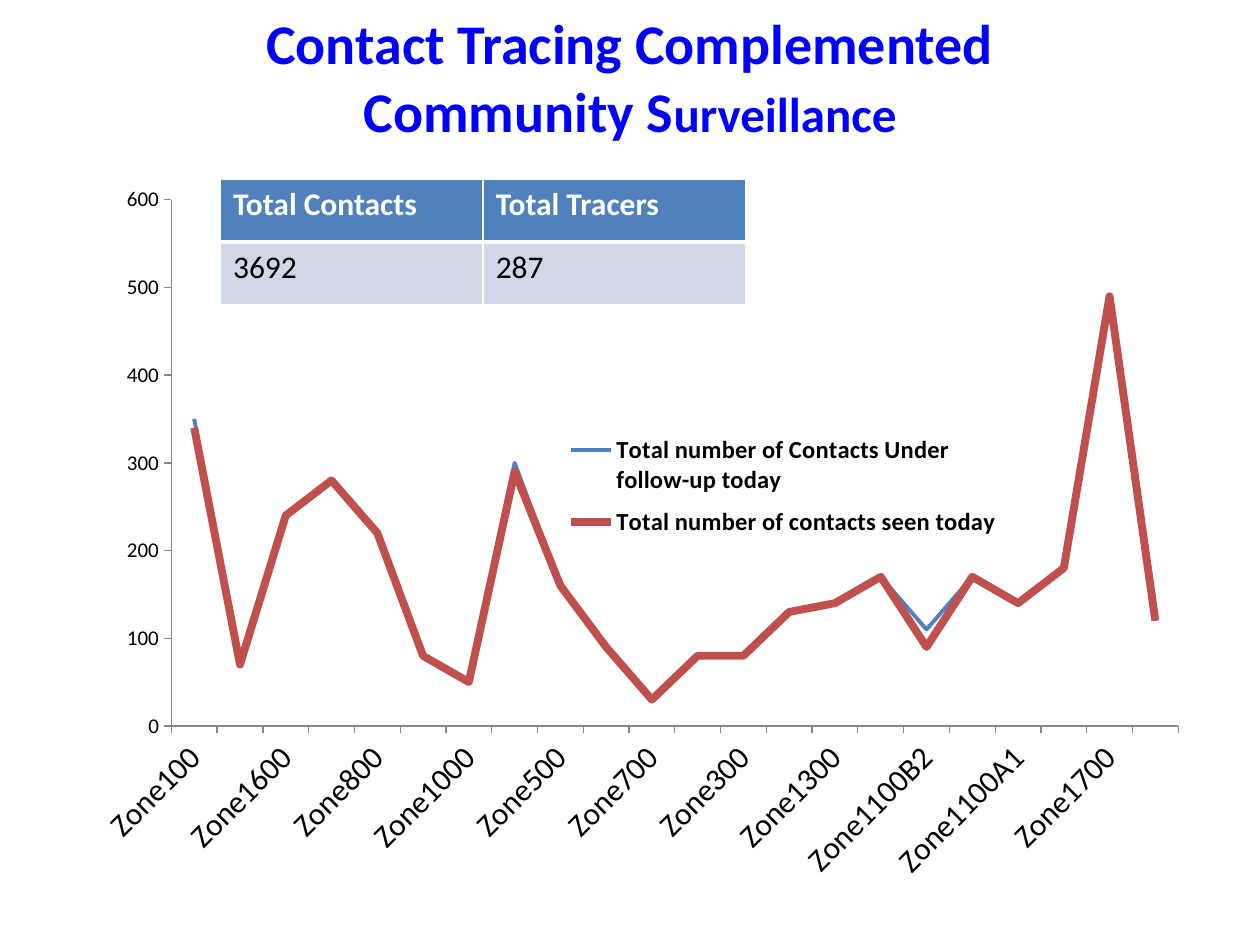
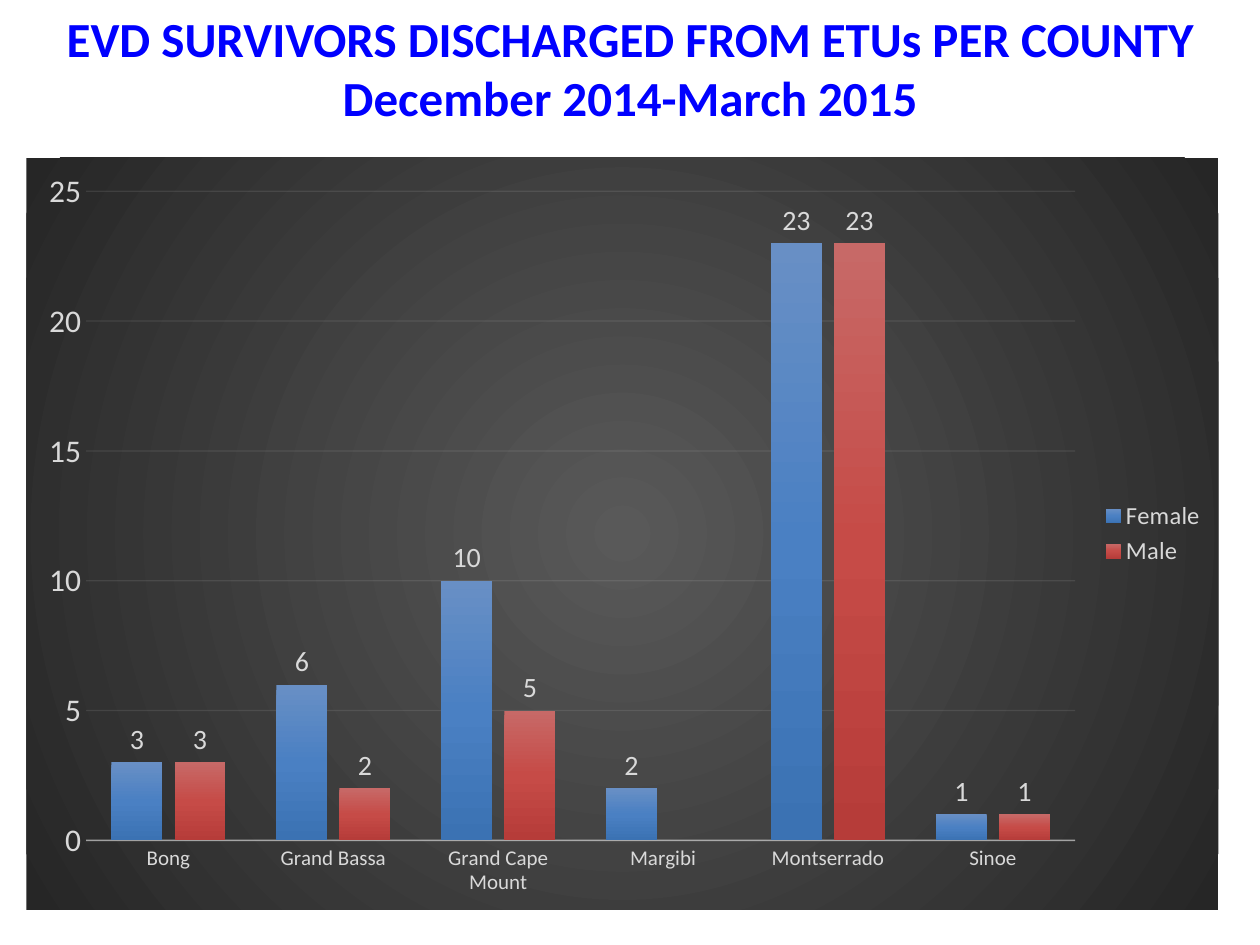
from lxml import etree
from pptx import Presentation
from pptx import util as u
from pptx.chart.data import CategoryChartData
from pptx.dml.color import RGBColor
from pptx.enum import chart as charts, text
from pptx.oxml import parse_xml
from pptx.oxml.ns import nsdecls, qn

PX = 9144
FONT = "Calibri"
WHITE = RGBColor(0xFF, 0xFF, 0xFF)
BLACK = RGBColor(0, 0, 0)
TITLE_BLUE = RGBColor(0, 0, 0xFF)
BLUE = RGBColor(0x4F, 0x81, 0xBD)
RED = RGBColor(0xC0, 0x50, 0x4D)
PALE_BLUE = RGBColor(0xD0, 0xD8, 0xE8)
AXIS_GRAY = RGBColor(0x86, 0x86, 0x86)
LIGHT_GRAY = RGBColor(0xD9, 0xD9, 0xD9)
RULE_GRAY = RGBColor(0xF2, 0xF2, 0xF2)
CHARCOAL = (RGBColor(0x59, 0x59, 0x59), RGBColor(0x26, 0x26, 0x26))
FEMALE_BLUES = (RGBColor(0x68, 0x8F, 0xC5), RGBColor(0x4A, 0x80, 0xC3), RGBColor(0x3B, 0x72, 0xB3))
MALE_REDS = (RGBColor(0xC7, 0x69, 0x67), RGBColor(0xC6, 0x4B, 0x47), RGBColor(0xB6, 0x3C, 0x39))
DOWNWARD = '<a:lin ang="5400000" scaled="0"/>'
FROM_CENTRE = '<a:path path="circle"><a:fillToRect l="50000" t="50000" r="50000" b="50000"/></a:path>'

ZONES = ["Zone" + name for name in (
    "100 1500 1600 1900 800 900 1000 400 500 600 700 200 300 1200 1300 "
    "1100B1 1100B2 1400 1100A1 1100A2 1700 1800").split()]
FOLLOWED = (350, 70, 240, 280, 220, 80, 50, 300, 160, 90, 30,
            80, 80, 130, 140, 170, 110, 170, 140, 180, 490, 120)
SEEN = (340, 70, 240, 280, 220, 80, 50, 290, 160, 90, 30,
        80, 80, 130, 140, 170, 90, 170, 140, 180, 490, 120)
COUNTIES = ["Bong", "Grand Bassa", "Grand Cape Mount", "Margibi", "Montserrado", "Sinoe"]


def emu(box):
    """Turn a box in px into EMU."""
    return [length * PX for length in box]


def style_font(font, size, color, bold=False):
    """Set the face, size, colour and weight of a font."""
    font.name, font.size, font.bold = FONT, u.Pt(size), bold
    font.color.rgb = color


def style_line(line, color, width, opacity=100):
    """Give a line a colour, a width and an opacity in percent."""
    line.color.rgb, line.width = color, u.Pt(width)
    if opacity < 100:
        color_element = line.fill._xPr.find(".//" + qn("a:srgbClr"))
        etree.SubElement(color_element, qn("a:alpha")).set("val", str(opacity * 1000))


def gradient(colors, direction):
    """Return a gradient fill of evenly spaced colours."""
    step = 100000 // (len(colors) - 1)
    stops = "".join(f'<a:gs pos="{index * step}"><a:srgbClr val="{color}"/></a:gs>'
                    for index, color in enumerate(colors))
    return parse_xml(f'<a:gradFill {nsdecls("a")} rotWithShape="1">'
                     f'<a:gsLst>{stops}</a:gsLst>{direction}</a:gradFill>')


def place_part(parent, position, fractions, target=""):
    """Fix the place of a chart part as fractions of the chart."""
    for layout in parent.findall(qn("c:layout")):
        parent.remove(layout)
    sizes = "".join(f'<c:{tag} val="{value}"/>' for tag, value in zip("xywh", fractions))
    parent.insert(position, parse_xml(
        f'<c:layout {nsdecls("c")}><c:manualLayout>{target}<c:xMode val="edge"/>'
        f'<c:yMode val="edge"/>{sizes}</c:manualLayout></c:layout>'))


def add_title(slide, box, lines):
    """Fill the title with lines, each a list of (text, size) runs."""
    title = slide.shapes.title
    title.left, title.top, title.width, title.height = emu(box)
    frame = title.text_frame
    frame.word_wrap, frame.auto_size = True, text.MSO_AUTO_SIZE.NONE
    frame.vertical_anchor = text.MSO_ANCHOR.TOP
    for index, runs in enumerate(lines):
        paragraph = frame.add_paragraph() if index else frame.paragraphs[0]
        paragraph.alignment = text.PP_ALIGN.CENTER
        style_font(paragraph.font, runs[0][1], TITLE_BLUE, True)
        for words, size in runs:
            run = paragraph.add_run()
            run.text = words
            style_font(run.font, size, TITLE_BLUE, True)


def add_base_chart(slide, box, kind, categories, series, plot_area, legend_font):
    """Add a chart with a fixed plot area and a legend at the right."""
    data = CategoryChartData()
    data.categories = categories
    for name, values in series:
        data.add_series(name, values)
    chart = slide.shapes.add_chart(kind, *emu(box), data).chart
    chart.has_title = False
    style_font(chart.font, 10, BLACK)
    place_part(chart._chartSpace.chart.plotArea, 0, plot_area, '<c:layoutTarget val="inner"/>')
    chart.has_legend = True
    chart.legend.position = charts.XL_LEGEND_POSITION.RIGHT
    chart.legend.include_in_layout = False
    style_font(chart.legend.font, *legend_font)
    return chart


def style_axes(chart, sizes, color, maximum, unit, tick):
    """Style the labels, ticks and scale of both axes."""
    for axis, size in zip((chart.category_axis, chart.value_axis), sizes):
        style_font(axis.tick_labels.font, size, color)
        axis.major_tick_mark, axis.minor_tick_mark = tick, charts.XL_TICK_MARK.NONE
        axis.has_major_gridlines = False
    value_axis = chart.value_axis
    value_axis.minimum_scale, value_axis.maximum_scale = 0, maximum
    value_axis.major_unit = unit


def add_contacts_chart(slide, box):
    """Add the line chart of contacts per zone."""
    chart = add_base_chart(
        slide, box, charts.XL_CHART_TYPE.LINE, ZONES,
        [("Total number of Contacts Under follow-up today", FOLLOWED),
         ("Total number of contacts seen today", SEEN)],
        (0.11, 0.044, 0.888, 0.719), (14, BLACK, True))
    place_part(chart.legend._element, 1, (0.45, 0.35, 0.4, 0.17))
    style_axes(chart, (18, 12), BLACK, 600, 100, charts.XL_TICK_MARK.OUTSIDE)
    for axis in (chart.category_axis, chart.value_axis):
        style_line(axis.format.line, AXIS_GRAY, 0.75)
    category_element = chart.category_axis._element
    category_element.find(qn("c:txPr")).find(qn("a:bodyPr")).set("rot", "-2700000")
    category_element.find(qn("c:noMultiLvlLbl")).addprevious(
        parse_xml(f'<c:tickLblSkip {nsdecls("c")} val="2"/>'))
    for series, color, width in zip(chart.plots[0].series, (BLUE, RED), (2.25, 4.5)):
        style_line(series.format.line, color, width)
        series.marker.style = charts.XL_MARKER_STYLE.NONE
        series.smooth = False


def add_totals_table(slide, box, rows):
    """Add the small table of totals with white rules."""
    table = slide.shapes.add_table(len(rows), len(rows[0]), *emu(box)).table
    for row_index, row in enumerate(rows):
        header = row_index == 0
        for column_index, words in enumerate(row):
            cell = table.cell(row_index, column_index)
            cell.text = words
            style_font(cell.text_frame.paragraphs[0].font, 18, WHITE if header else BLACK, header)
            cell.fill.solid()
            cell.fill.fore_color.rgb = BLUE if header else PALE_BLUE
            widths = {"L": 1, "R": 1, "T": 1 if header else 3, "B": 3 if header else 1}
            for position, (side, width) in enumerate(widths.items()):
                cell._tc.get_or_add_tcPr().insert(position, parse_xml(
                    f'<a:ln{side} {nsdecls("a")} w="{u.Pt(width)}"><a:solidFill>'
                    f'<a:srgbClr val="{WHITE}"/></a:solidFill></a:ln{side}>'))


def add_survivors_chart(slide, box):
    """Add the dark column chart of survivors per county."""
    chart = add_base_chart(
        slide, box, charts.XL_CHART_TYPE.COLUMN_CLUSTERED, COUNTIES,
        [("Female", (3, 6, 10, 2, 23, 1)), ("Male", (3, 2, 5, None, 23, 1))],
        (0.05, 0.045, 0.83, 0.863), (14, LIGHT_GRAY))
    background = parse_xml(f'<c:spPr {nsdecls("c", "a")}><a:ln><a:noFill/></a:ln></c:spPr>')
    background.insert(0, gradient(CHARCOAL, FROM_CENTRE))
    chart._chartSpace.chart.addnext(background)
    style_axes(chart, (12, 18), LIGHT_GRAY, 25, 5, charts.XL_TICK_MARK.NONE)
    style_line(chart.category_axis.format.line, RULE_GRAY, 1, 54)
    chart.value_axis.format.line.fill.background()
    chart.value_axis.has_major_gridlines = True
    style_line(chart.value_axis.major_gridlines.format.line, RULE_GRAY, 0.75, 10)
    plot = chart.plots[0]
    plot.gap_width, plot.overlap, plot.vary_by_categories = 100, -24, False
    for series, colors in zip(plot.series, (FEMALE_BLUES, MALE_REDS)):
        series.format.line.fill.background()
        series._element.get_or_add_spPr().insert(0, gradient(colors, DOWNWARD))
        labels = series.data_labels
        labels.show_value = True
        labels.position = charts.XL_LABEL_POSITION.OUTSIDE_END
        style_font(labels.font, 16, LIGHT_GRAY)


def build_contacts_slide(slide):
    """Build the contact tracing slide."""
    add_title(slide, (0, 2, 1000, 118), [
        [("Contact Tracing Complemented", 32)],
        [("Community S", 32), ("urveillance", 28)]])
    add_contacts_chart(slide, (37, 133, 900, 581))
    add_totals_table(slide, (175, 142, 417, 100),
                     [("Total Contacts", "Total Tracers"), ("3692", "287")])


def build_survivors_slide(slide):
    """Build the discharged survivors slide."""
    add_title(slide, (0, 2, 1000, 104), [
        [("EVD SURVIVORS DISCHARGED FROM ETUs PER COUNTY", 28)],
        [("December 2014-March 2015", 28)]])
    add_survivors_chart(slide, (21, 125, 946, 597))


def main():
    """Build and save the presentation."""
    presentation = Presentation()
    presentation.slide_width, presentation.slide_height = emu((1000, 750))
    title_only = presentation.slide_layouts[5]
    for build in (build_contacts_slide, build_survivors_slide):
        build(presentation.slides.add_slide(title_only))
    presentation.save("out.pptx")


if __name__ == "__main__":
    main()
